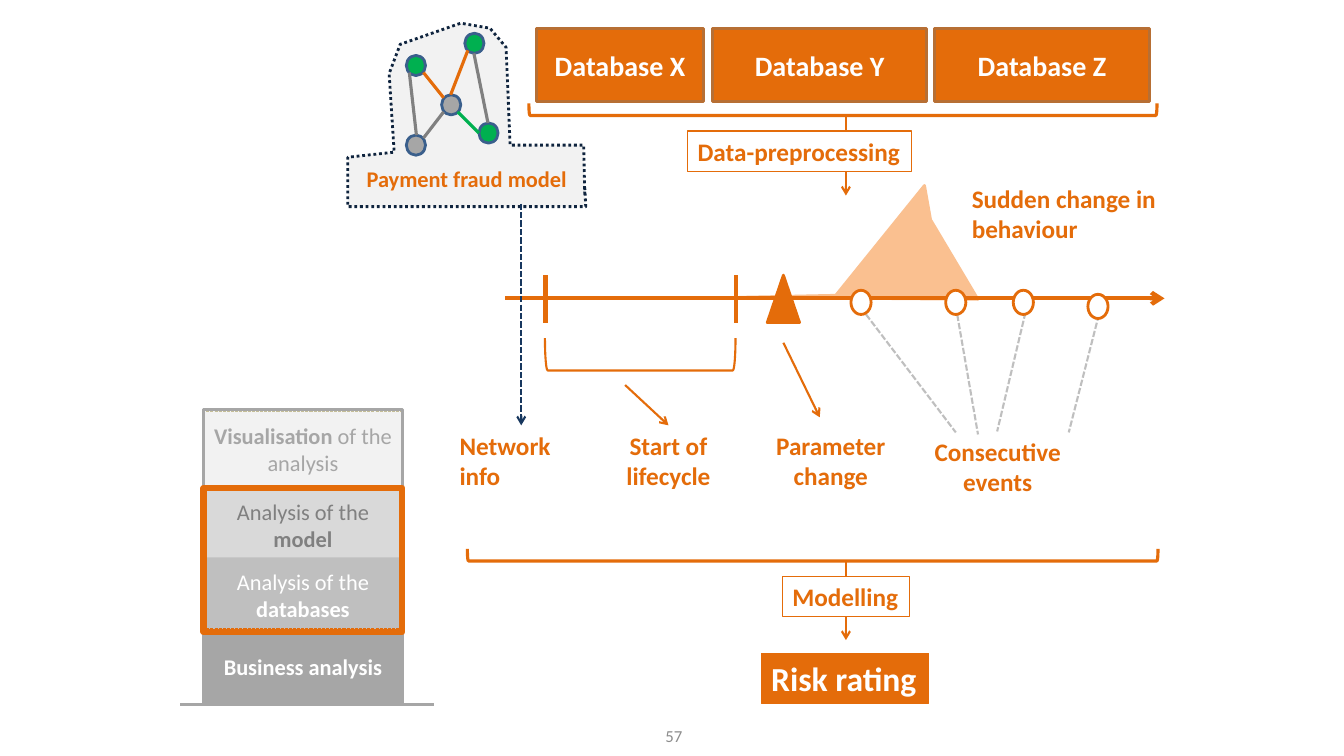
import pptx
import pptx.util
import pptx.dml.color
import pptx.enum.dml
import pptx.enum.shapes
import pptx.enum.text
import pptx.oxml.ns
import lxml.etree

Inches, Pt = pptx.util.Inches, pptx.util.Pt
SHAPE = pptx.enum.shapes.MSO_SHAPE
ALIGN = pptx.enum.text.PP_ALIGN
ANCHOR = pptx.enum.text.MSO_ANCHOR
DASH = pptx.enum.dml.MSO_LINE.SQUARE_DOT
DOT = pptx.enum.dml.MSO_LINE.ROUND_DOT
qn = pptx.oxml.ns.qn

COLORS = {
    "orange": "E46C0A", "peach": "FAC090", "brown": "B76F34", "sand": "C4BD97",
    "green": "00B050", "blue": "3A5F8C", "navy": "17375E", "ink": "0F243E",
    "white": "FFFFFF", "mist": "F2F2F2", "light": "D9D9D9", "silver": "BFBFBF",
    "gray": "A6A6A6", "dark": "808080", "number": "8C8C8C",
}


class Deck:
    font = "Calibri"

    def __init__(self):
        self.prs = pptx.Presentation()
        self.prs.slide_width, self.prs.slide_height = Inches(13.33), Inches(7.5)
        self.s = self.prs.slides.add_slide(self.prs.slide_layouts[6])
        self.shapes = self.s.shapes

    def rgb(self, name):
        return pptx.dml.color.RGBColor.from_string(COLORS[name])

    def outline(self, line, color, width, dash=None):
        line.color.rgb = self.rgb(color)
        line.width = Pt(width)
        if dash:
            line.dash_style = dash

    def style(self, sp, fill, line, width, dash):
        sp.shadow.inherit = False
        if fill:
            sp.fill.solid()
            sp.fill.fore_color.rgb = self.rgb(fill)
        else:
            sp.fill.background()
        if line:
            self.outline(sp.line, line, width, dash)
        else:
            sp.line.fill.background()
        return sp

    def shape(self, kind, box, fill=None, line=None, width=2, dash=None, rotation=0):
        sp = self.shapes.add_shape(kind, *map(Inches, box))
        sp.rotation = rotation
        return self.style(sp, fill, line, width, dash)

    def freeform(self, points, fill, line, dash=None):
        pts = [(Inches(x), Inches(y)) for x, y in points]
        builder = self.shapes.build_freeform(*pts[0])
        builder.add_line_segments(pts[1:], close=False)
        return self.style(builder.convert_to_shape(), fill, line, 2, dash)

    def line(self, start, end, color="orange", width=1.5, dash=None, arrow=False):
        cx = self.shapes.add_connector(
            pptx.enum.shapes.MSO_CONNECTOR.STRAIGHT, *map(Inches, start + end))
        self.outline(cx.line, color, width, dash)
        sp_pr = cx._element.spPr
        if arrow:
            lxml.etree.SubElement(sp_pr.get_or_add_ln(), qn("a:tailEnd"), type="arrow")
        lxml.etree.SubElement(sp_pr, qn("a:effectLst"))

    def put_text(self, sp, paragraphs, size, color, align=ALIGN.CENTER,
                 anchor=ANCHOR.MIDDLE, wrap=True):
        """Fill a shape with paragraphs, each a list of (text, bold) runs."""
        tf = sp.text_frame
        tf.word_wrap = wrap
        tf.vertical_anchor = anchor
        for i, runs in enumerate(paragraphs):
            p = tf.add_paragraph() if i else tf.paragraphs[0]
            p.alignment = align
            for text, bold in runs:
                r = p.add_run()
                r.text = text
                r.font.name, r.font.size, r.font.bold = self.font, Pt(size), bold
                r.font.color.rgb = self.rgb(color)

    def text(self, box, lines, size=18, color="orange", align=ALIGN.CENTER,
             anchor=ANCHOR.TOP, bold=True):
        sp = self.shapes.add_textbox(*map(Inches, box))
        self.put_text(sp, [[(t, bold)] for t in lines], size, color, align, anchor)

    def tag(self, box, text, size=18, fill="white", color="orange"):
        sp = self.shape(SHAPE.RECTANGLE, box, fill, "orange", 0.75)
        self.put_text(sp, [[(text, True)]], size, color, ALIGN.LEFT, ANCHOR.TOP, wrap=False)

    def bracket(self, box, width):
        self.shape(SHAPE.RIGHT_BRACKET, box, None, "orange", width, rotation=90)

    def begin_group(self):
        self.shapes = self.s.shapes.add_group_shape().shapes

    def end_group(self):
        self.shapes = self.s.shapes


def draw_timeline(d):
    for start, end in [((8.59, 3.12), (9.48, 4.29)), ((9.48, 3.04), (9.7, 4.31)),
                       ((10.19, 3.02), (9.89, 4.28)), ((10.92, 3.04), (10.6, 4.29))]:
        d.line(start, end, "silver", dash=DASH)
    d.freeform([(7.33, 2.95), (8.29, 2.93), (9.17, 1.84), (9.23, 2.18), (9.7, 2.97),
                (7.4, 2.95)], "peach", "peach")
    d.line((5.01, 2.96), (11.55, 2.96), width=3, arrow=True)
    for x in (5.41, 7.3):
        d.line((x, 2.73), (x, 3.2), width=3)
    for x, y in [(8.44, 2.88), (9.38, 2.88), (10.05, 2.88), (10.79, 2.92)]:
        d.shape(SHAPE.OVAL, (x, y, 0.2, 0.24), "white", "orange")
    d.shape(SHAPE.ISOSCELES_TRIANGLE, (7.61, 2.73, 0.32, 0.47), "orange", "orange")
    d.bracket((6.19, 2.57, 0.32, 1.89), 1.5)
    d.line((7.77, 3.4), (8.13, 4.14), arrow=True)
    d.line((6.2, 3.82), (6.63, 4.22), arrow=True)
    d.text((8.87, 4.28, 2.05, 0.71), ["Consecutive events"])
    d.text((5.8, 4.22, 1.66, 0.71), ["Start of", "lifecycle"])
    d.text((7.29, 4.22, 1.9, 0.71), ["Parameter", "change"])
    d.text((9.54, 1.77, 2.43, 0.71), ["Sudden change in behaviour"], align=ALIGN.LEFT)


def draw_process(d):
    for letter, x, w in [("X", 5.32, 1.66), ("Y", 7.07, 2.12), ("Z", 9.27, 2.13)]:
        sp = d.shape(SHAPE.RECTANGLE, (x, 0.28, w, 0.73), "orange", "brown")
        d.put_text(sp, [[("Database " + letter, True)]], 20, "white")
    d.bracket((8.3, -2.03, 0.12, 6.23), 2.25)
    d.bracket((8, 2.08, 0.12, 6.85), 2.25)
    for y in (1.15, 5.56):
        d.line((8.39, y), (8.39, y + 0.79), arrow=True)
    d.tag((6.82, 1.3, 2.22, 0.4), "Data-preprocessing")
    d.tag((7.76, 5.72, 1.26, 0.4), "Modelling")
    d.tag((7.55, 6.48, 1.66, 0.5), "Risk rating", 24, "orange", "white")


def draw_fraud_model(d):
    d.freeform([(5.8, 1.93), (5.79, 1.44), (5.06, 1.44), (5.02, 0.47), (4.86, 0.28),
                (4.57, 0.23), (3.97, 0.44), (3.86, 0.73), (3.91, 1.51), (3.45, 1.56),
                (3.45, 2.05), (5.81, 2.05), (5.8, 1.85)], "mist", "ink", DOT)
    d.begin_group()
    for x, y, fill in [(4.03, 0.55, "green"), (4.61, 0.33, "green"), (4.75, 1.22, "green"),
                       (4.03, 1.34, "gray"), (4.38, 0.94, "gray")]:
        d.shape(SHAPE.OVAL, (x, y, 0.19, 0.2), fill, "blue")
    for start, end, color in [
            ((4.7, 0.53), (4.84, 1.22), "dark"), ((4.64, 0.5), (4.47, 0.94), "orange"),
            ((4.54, 1.11), (4.75, 1.32), "green"), ((4.4, 1.11), (4.2, 1.37), "dark"),
            ((4.4, 0.97), (4.2, 0.72), "orange"), ((4.06, 0.72), (4.13, 1.34), "dark")]:
        d.line(start, end, color, 2.25)
    d.end_group()
    d.text((3.41, 1.59, 2.44, 0.37), ["Payment fraud model"], 16)
    d.line((5.17, 2.02), (5.17, 4.22), "navy", dash=DASH, arrow=True)
    d.text((4.46, 4.22, 1.51, 0.71), ["Network", "info"], align=ALIGN.LEFT)


def draw_stack(d):
    d.line((1.79, 6.99), (4.3, 6.99), "gray", 2.25)
    left, width = 2.02, 1.97
    layers = [
        (4.08, "mist", "sand", "gray", [("Visualisation ", True), ("of the analysis", False)]),
        (4.83, "light", "sand", "dark", [("Analysis of the ", False), ("model", True)]),
        (5.53, "silver", None, "white", [("Analysis of the ", False), ("databases", True)]),
        (6.24, "gray", "orange", "white", [("Business analysis", True)]),
    ]
    for y, fill, line, color, runs in layers:
        sp = d.shape(SHAPE.RECTANGLE, (left, y, width, 0.75), fill, line, 0.75, DASH)
        d.put_text(sp, [runs], 16, color)
    d.shape(SHAPE.RECTANGLE, (left, 4.06, width, 2.93), None, "gray")
    d.shape(SHAPE.RECTANGLE, (left, 4.84, width, 1.43), None, "orange", 4.5)


def main():
    d = Deck()
    draw_timeline(d)
    draw_process(d)
    draw_fraud_model(d)
    d.text((5.13, 7.14, 3.11, 0.32), ["57"], 12, "number", anchor=ANCHOR.MIDDLE, bold=False)
    draw_stack(d)
    d.prs.save("out.pptx")


if __name__ == "__main__":
    main()
